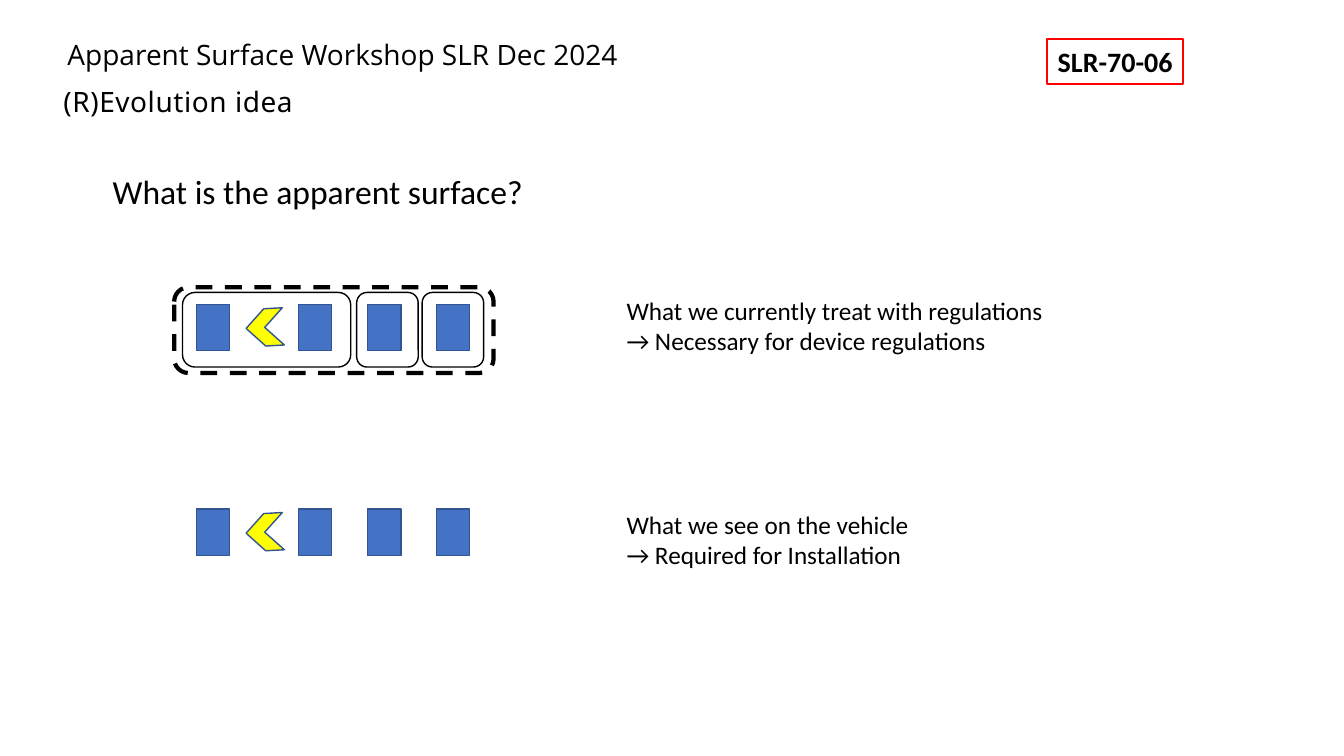
from pptx import Presentation
from pptx.dml.color import RGBColor
from pptx.enum.dml import MSO_LINE
from pptx.enum.shapes import MSO_SHAPE
from pptx.enum.text import MSO_ANCHOR, PP_ALIGN
from pptx.util import Cm, Pt

RECTANGLE = MSO_SHAPE.RECTANGLE
ROUNDED = MSO_SHAPE.ROUNDED_RECTANGLE
CHEVRON = MSO_SHAPE.CHEVRON
DASH = MSO_LINE.DASH
TOP, MIDDLE = MSO_ANCHOR.TOP, MSO_ANCHOR.MIDDLE
LEFT, CENTER = PP_ALIGN.LEFT, PP_ALIGN.CENTER

COLORS = {
    "text": "000000",
    "lamp": "4472C4",
    "lamp_edge": "325491",
    "arrow": "FFFF00",
    "tag": "FF0000",
}


def write_text(shape, text, size=18, font="Calibri", bold=False, align=LEFT,
               anchor=TOP, inset=None, wrap=True, line_spacing=None, tracking=0):
    frame = shape.text_frame
    frame.word_wrap = wrap
    frame.vertical_anchor = anchor
    if inset is not None:
        frame.margin_left = frame.margin_right = Cm(inset)
        frame.margin_top = frame.margin_bottom = Cm(inset)
    for index, line in enumerate(text.split("\n")):
        paragraph = frame.add_paragraph() if index else frame.paragraphs[0]
        paragraph.alignment = align
        if line_spacing:
            paragraph.line_spacing = line_spacing
        run = paragraph.add_run()
        run.text = line
        run.font.size = Pt(size)
        run.font.name = font
        run.font.bold = bold
        run.font.color.rgb = RGBColor.from_string(COLORS["text"])
        if tracking:
            run._r.get_or_add_rPr().set("spc", str(tracking))


class SlideBuilder:
    def __init__(self, slide, colors):
        self.slide = slide
        self.colors = colors

    def color(self, name):
        return RGBColor.from_string(self.colors[name])

    def text(self, box, text, **style):
        shape = self.slide.shapes.add_textbox(*map(Cm, box))
        write_text(shape, text, **style)

    def shape(self, kind, box, fill=None, line="text", width=1, dash=None, rotation=0):
        shape = self.slide.shapes.add_shape(kind, *map(Cm, box))
        shape.shadow.inherit = False
        shape.rotation = rotation
        if fill:
            shape.fill.solid()
            shape.fill.fore_color.rgb = self.color(fill)
        else:
            shape.fill.background()
        shape.line.color.rgb = self.color(line)
        shape.line.width = Pt(width)
        if dash:
            shape.line.dash_style = dash
        return shape

    def lamp_row(self, top):
        row = [self.shape(RECTANGLE, (left, top, 0.84, 1.17), "lamp", "lamp_edge")
               for left in (4.95, 7.52, 9.27, 11)]
        row.append(self.shape(CHEVRON, (6.2, top + 0.11, 0.94, 0.94), "arrow",
                              "lamp_edge", rotation=176.8))
        return row

    def housings(self, top):
        row = [self.shape(ROUNDED, (left, top, width, 1.88))
               for left, width in ((4.6, 4.24), (8.99, 1.55), (10.64, 1.55))]
        row.append(self.shape(ROUNDED, (4.39, top - 0.13, 8.05, 2.16), width=3, dash=DASH))
        return row

    def group(self, shapes):
        self.slide.shapes.add_group_shape(shapes)


def main():
    presentation = Presentation()
    presentation.slide_width, presentation.slide_height = Cm(33.87), Cm(19.05)
    slide = presentation.slides.add_slide(presentation.slide_layouts[6])
    builder = SlideBuilder(slide, COLORS)

    builder.text((1.6, 2.13, 26.64, 0.99), "(R)Evolution idea", size=20,
                 font="Noto Sans", inset=0, line_spacing=Pt(24), tracking=40)
    builder.text((1.45, 0.99, 19.99, 0.84), "Apparent Surface Workshop SLR Dec 2024",
                 size=20, font="Open Sans", anchor=MIDDLE, line_spacing=0.9)
    builder.text((2.59, 4.17, 24.03, 1.27), "What is the apparent surface?", size=24)

    builder.group(builder.lamp_row(7.67) + builder.housings(7.37))
    builder.lamp_row(12.83)

    builder.text((15.54, 7.32, 12.7, 1.8),
                 "What we currently treat with regulations\n→ Necessary for device regulations")
    builder.text((15.54, 12.7, 8.33, 1.8),
                 "What we see on the vehicle\n→ Required for Installation")

    tag = builder.shape(RECTANGLE, (26.39, 0.99, 3.43, 1.12), line="tag", width=1.5)
    write_text(tag, "SLR-70-06", size=20, bold=True, align=CENTER, anchor=MIDDLE, wrap=False)

    presentation.save("out.pptx")


if __name__ == "__main__":
    main()
